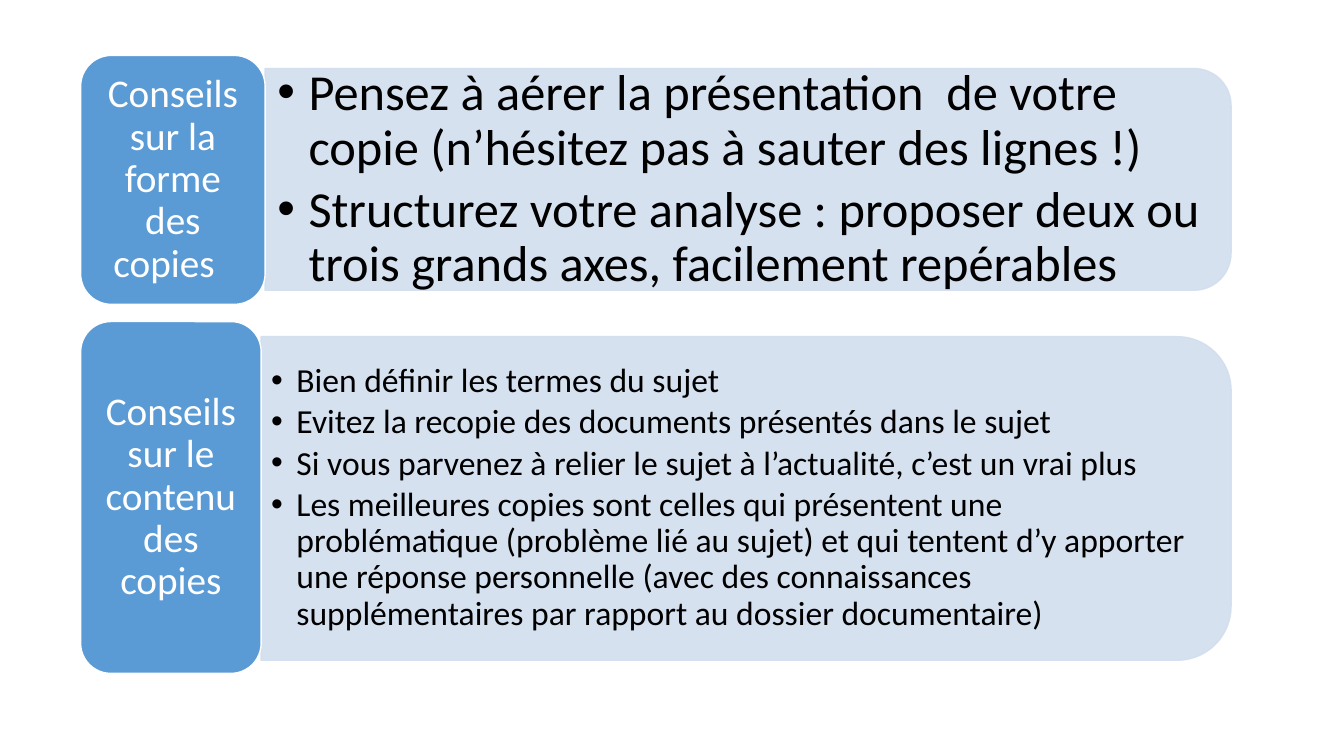
from dataclasses import dataclass

from lxml.etree import SubElement
from pptx import Presentation
from pptx.dml.color import RGBColor
from pptx.enum.shapes import MSO_SHAPE as Shape
from pptx.enum.text import MSO_ANCHOR as Anchor, MSO_AUTO_SIZE as AutoSize, PP_ALIGN as Align
from pptx.oxml.ns import qn
from pptx.util import Inches, Pt


@dataclass(frozen=True)
class Theme:
    font: str = "Calibri"
    label_fill: RGBColor = RGBColor(0x5B, 0x9B, 0xD5)
    panel_fill: RGBColor = RGBColor(0xD2, 0xDE, 0xEF)
    light: RGBColor = RGBColor(0xFF, 0xFF, 0xFF)
    dark: RGBColor = RGBColor(0, 0, 0)
    label_size: int = 28
    form_size: int = 36
    content_size: int = 24
    panel_opacity: int = 90


def apply(target, formats):
    for attribute, value in formats.items():
        setattr(target, attribute, value)


class AdviceSlide:
    def __init__(self, slide, theme):
        self.slide, self.theme = slide, theme

    def paint(self, shape, fill, line, opacity=100):
        shape.shadow.inherit = False
        shape.line.width = Pt(1)
        for paint, color in ((shape.fill, fill), (shape.line.fill, line)):
            paint.solid()
            paint.fore_color.rgb = color
        if opacity < 100:
            for color in shape._element.spPr.iter(qn("a:srgbClr")):
                SubElement(color, qn("a:alpha"), val=str(opacity * 1000))

    def frame(self, text_frame, inset_x, inset_y):
        apply(text_frame, dict(
            word_wrap=True, auto_size=AutoSize.NONE, vertical_anchor=Anchor.MIDDLE,
            margin_left=Inches(inset_x), margin_right=Inches(inset_x),
            margin_top=Inches(inset_y), margin_bottom=Inches(inset_y)))

    def set_paragraph(self, paragraph, text, size, color, gap, **formats):
        paragraph.text = text
        apply(paragraph, dict(line_spacing=0.9, space_before=Pt(0),
                              space_after=Pt(round(size * gap, 1)), **formats))
        apply(paragraph.font, dict(name=self.theme.font, size=Pt(size), bold=False))
        paragraph.font.color.rgb = color

    def panel(self, left, top, width, height):
        # A quarter turn swaps width and height around the same centre
        shape = self.slide.shapes.add_shape(
            Shape.ROUND_2_SAME_RECTANGLE,
            Inches(left + (width - height) / 2), Inches(top + (height - width) / 2),
            Inches(height), Inches(width))
        shape.rotation = 90
        fill = self.theme.panel_fill
        self.paint(shape, fill, fill, self.theme.panel_opacity)

    def label(self, text, left, top, width, height):
        shape = self.slide.shapes.add_shape(
            Shape.ROUNDED_RECTANGLE, *map(Inches, (left, top, width, height)))
        self.paint(shape, self.theme.label_fill, self.theme.light)
        self.frame(shape.text_frame, 0.12, 0.06)
        self.set_paragraph(shape.text_frame.paragraphs[0], text, self.theme.label_size,
                           self.theme.light, 0.35, alignment=Align.CENTER)

    def bullets(self, body, items, box, size, indent, insets):
        apply(body, dict(zip(("left", "top", "width", "height"), map(Inches, box))))
        self.frame(body.text_frame, *insets)
        for number, item in enumerate(items):
            paragraph = (body.text_frame.add_paragraph() if number
                         else body.text_frame.paragraphs[0])
            self.set_paragraph(paragraph, item, size, self.theme.dark, 0.15,
                               level=1, alignment=Align.LEFT)
            properties = paragraph._p.get_or_add_pPr()
            properties.set("marL", str(Inches(indent)))
            properties.set("indent", str(-Inches(indent)))
            # Bullet elements come before the default run properties
            defaults = properties.find(qn("a:defRPr"))
            SubElement(properties, qn("a:buFont"), typeface="Arial")
            SubElement(properties, qn("a:buChar"), char="•")
            if defaults is not None:
                properties.append(defaults)
        # Bring the list in front of its panel
        self.slide.shapes._spTree.append(body._element)


def main():
    theme = Theme()
    presentation = Presentation()
    presentation.slide_width, presentation.slide_height = Inches(13.33), Inches(7.5)
    slide = presentation.slides.add_slide(presentation.slide_layouts[3])
    title, form_list, content_list = slide.placeholders
    title._element.getparent().remove(title._element)
    advice = AdviceSlide(slide, theme)

    # Advice on form
    advice.panel(2.63, 0.68, 9.58, 2.2)
    advice.bullets(form_list, [
        "Pensez à aérer la présentation  de votre copie (n’hésitez pas à sauter des lignes !)",
        "Structurez votre analyse : proposer deux ou trois grands axes, facilement repérables",
    ], (2.63, 0.79, 9.47, 1.99), theme.form_size, 0.31, (0.12, 0.06))
    advice.label("Conseils sur la forme des copies  ", 0.8, 0.55, 1.83, 2.47)

    # Advice on content
    advice.panel(2.59, 3.34, 9.62, 3.21)
    advice.bullets(content_list, [
        "Bien définir les termes du sujet",
        "Evitez la recopie des documents présentés dans le sujet",
        "Si vous parvenez à relier le sujet à l’actualité, c’est un vrai plus",
        "Les meilleures copies sont celles qui présentent une problématique (problème lié "
        "au sujet) et qui tentent d’y apporter une réponse personnelle (avec des "
        "connaissances supplémentaires par rapport au dossier documentaire)",
    ], (2.59, 3.49, 9.46, 2.9), theme.content_size, 0.25, (0.1, 0.05))
    advice.label("Conseils sur le contenu des copies", 0.8, 3.19, 1.79, 3.49)

    presentation.save("out.pptx")


if __name__ == "__main__":
    main()
